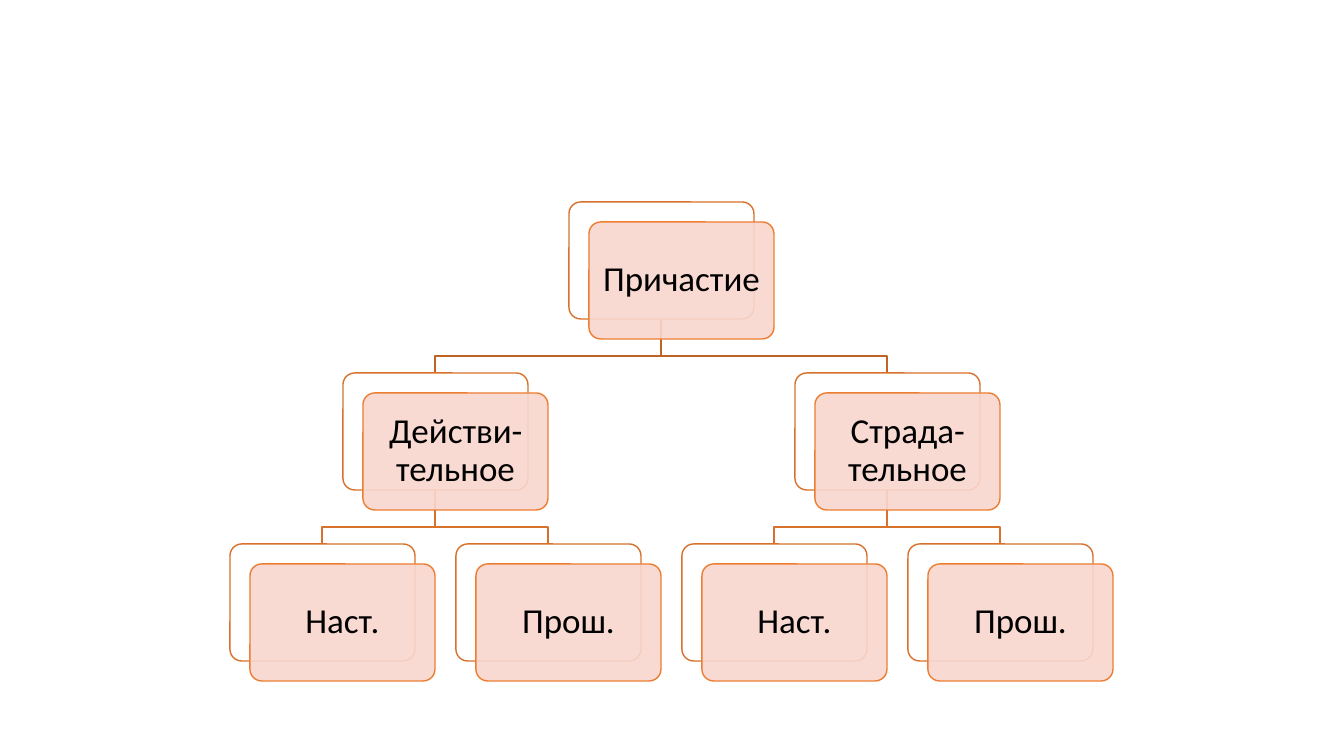
from lxml import etree
from pptx import Presentation
from pptx import util as u
from pptx.dml.color import RGBColor
from pptx.enum import shapes, text
from pptx.oxml.ns import qn

THEME = {
    "font": "Calibri",
    "size": u.Pt(25),
    "line_width": u.Pt(1),
    "text": RGBColor.from_string("000000"),
    "back_fill": RGBColor.from_string("FFFFFF"),
    "back_line": RGBColor.from_string("D7712C"),
    "card_fill": RGBColor.from_string("F8D7CE"),
    "card_line": RGBColor.from_string("ED7D31"),
    "links": [RGBColor.from_string("BE6427"), RGBColor.from_string("D7712C")],
}
PX = 914400 / 100.8
CARD_WIDTH, CARD_HEIGHT = 185, 117
TREE_LEFT, TREE_TOP = 230, 202
HALF_COLUMN, LEVEL_STEP = 113, 171
CARD_OFFSET = 20
ELBOW_RISE = 17

# label, level, position in half columns, index of the parent
NODES = [
    ("Причастие", 0, 3, None),
    ("Действи-тельное", 1, 1, 0),
    ("Наст.", 2, 0, 1),
    ("Прош.", 2, 2, 1),
    ("Страда-тельное", 1, 5, 0),
    ("Наст.", 2, 4, 4),
    ("Прош.", 2, 6, 4),
]


def px(length):
    return u.Emu(round(length * PX))


def add_card(left, top, fill, line):
    card = slide.shapes.add_shape(
        shapes.MSO_SHAPE.ROUNDED_RECTANGLE,
        px(left), px(top), px(CARD_WIDTH), px(CARD_HEIGHT))
    card.adjustments[0] = 0.1
    card.shadow.inherit = False
    card.fill.solid()
    card.fill.fore_color.rgb = fill
    card.line.color.rgb = line
    card.line.width = THEME["line_width"]
    return card


presentation = Presentation()
presentation.slide_width = px(1344)
presentation.slide_height = px(756)
slide = presentation.slides.add_slide(presentation.slide_layouts[6])

corners = [(TREE_LEFT + column * HALF_COLUMN, TREE_TOP + level * LEVEL_STEP)
           for _, level, column, _ in NODES]

# Elbow links lie behind the cards
for (_, level, _, parent), (left, top) in zip(NODES, corners):
    if parent is None:
        continue
    parent_left, parent_top = corners[parent]
    start_x, end_x = parent_left + CARD_WIDTH // 2, left + CARD_WIDTH // 2
    elbow_y = top - ELBOW_RISE
    builder = slide.shapes.build_freeform(
        px(start_x), px(parent_top + CARD_HEIGHT))
    builder.add_line_segments(
        [(px(start_x), px(elbow_y)), (px(end_x), px(elbow_y)), (px(end_x), px(top))],
        close=False)
    link = builder.convert_to_shape()
    link.shadow.inherit = False
    link.fill.background()
    link.line.color.rgb = THEME["links"][level - 1]
    link.line.width = THEME["line_width"]

for (label, *_), (left, top) in zip(NODES, corners):
    add_card(left, top, THEME["back_fill"], THEME["back_line"])
    card = add_card(left + CARD_OFFSET, top + CARD_OFFSET,
                    THEME["card_fill"], THEME["card_line"])
    color = card.fill._xPr.find(qn("a:solidFill"))[0]
    etree.SubElement(color, qn("a:alpha"), val="90000")

    frame = card.text_frame
    frame.word_wrap = True
    frame.vertical_anchor = text.MSO_ANCHOR.MIDDLE
    frame.margin_left = frame.margin_right = px(9)
    frame.margin_top = frame.margin_bottom = px(9)
    paragraph = frame.paragraphs[0]
    paragraph.text = label
    paragraph.alignment = text.PP_ALIGN.CENTER
    paragraph.line_spacing = 0.9
    paragraph.font.name = THEME["font"]
    paragraph.font.size = THEME["size"]
    paragraph.font.color.rgb = THEME["text"]

presentation.save("out.pptx")
